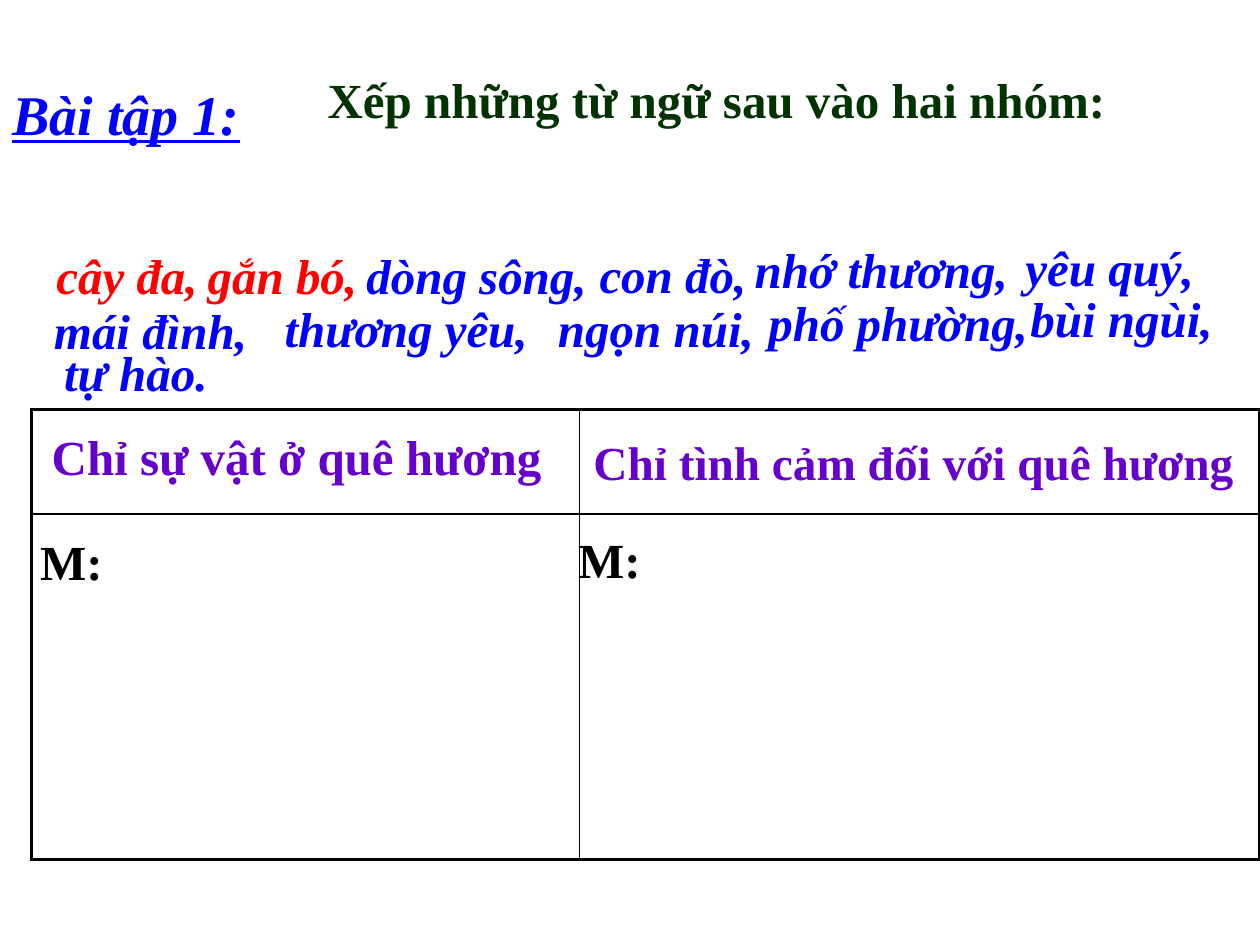
from lxml.etree import SubElement
from pptx import Presentation
from pptx.dml.color import RGBColor
from pptx.enum.text import MSO_ANCHOR, MSO_AUTO_SIZE, PP_ALIGN
from pptx.oxml.ns import qn
from pptx.util import Inches, Pt

THEME = {
    "font": "Times New Roman",
    "label": 32, "text": 28, "small": 27,
    "blue": "0000FF", "red": "FF0000", "green": "003300",
    "purple": "6600CC", "black": "000000",
    "outer": 2.25, "inner": 1,
}

LINE_HEIGHT = 0.57
TITLE = ("Xếp những từ ngữ sau vào hai nhóm:", 2.5, 0.5, 6.67)
LABEL = ("Bài tập 1:", 0, 0.58, 2.33)
WORDS = [
    ("cây đa,", 0.35, 1.9, 1.33, "red"),
    ("gắn bó,", 1.55, 1.9, 1.5, "red"),
    ("dòng sông,", 2.81, 1.9, 2, "blue"),
    ("con đò,", 4.66, 1.89, 1.42, "blue"),
    ("nhớ thương,", 5.89, 1.85, 2.25, "blue"),
    ("yêu quý,", 8.04, 1.83, 1.58, "blue"),
    ("mái đình,", 0.33, 2.33, 1.75, "blue"),
    ("thương yêu,", 2.16, 2.32, 2.25, "blue"),
    ("ngọn núi,", 4.33, 2.32, 1.92, "blue"),
    ("phố phường,", 6, 2.27, 2.33, "blue"),
    ("bùi ngùi,", 8.08, 2.24, 1.67, "blue"),
    ("tự hào.", 0.41, 2.67, 1.68, "blue"),
]
GROUPS = [
    ("Chỉ sự vật ở quê hương", 0.12, 3.33, 4.42, "text", LINE_HEIGHT),
    ("Chỉ tình cảm đối với quê hương", 4.42, 3.39, 5.58, "small", 0.55),
]
SAMPLES = [("M:", 4.49, 4.15, 0.75), ("M:", 0.22, 4.17, 0.75)]
GRID_LEFT, GRID_TOP = 0.25, 3.25
COLUMNS = [4.35, 5.4]
ROWS = [0.83, 2.74]


def write(box, text, color, size="text", italic=False, underline=False, indent=0.1):
    frame = box.text_frame
    frame.word_wrap = True
    frame.auto_size = MSO_AUTO_SIZE.SHAPE_TO_FIT_TEXT
    frame.vertical_anchor = MSO_ANCHOR.MIDDLE
    frame.margin_left, frame.margin_right = Inches(indent), 0
    paragraph = frame.paragraphs[0]
    paragraph.alignment = PP_ALIGN.LEFT
    span = paragraph.add_run()
    span.text = text
    font = span.font
    font.name, font.size = THEME["font"], Pt(THEME[size])
    font.bold, font.italic, font.underline = True, italic, underline
    font.color.rgb = RGBColor.from_string(THEME[color])


def add_text(page, text, left, top, width, color, height=LINE_HEIGHT, **style):
    box = page.shapes.add_textbox(Inches(left), Inches(top), Inches(width), Inches(height))
    write(box, text, color, **style)


def add_title(page, text, left, top, width):
    title = page.shapes.title
    title.left, title.top = Inches(left), Inches(top)
    title.width, title.height = Inches(width), Inches(LINE_HEIGHT)
    write(title, text, "green")


def draw_borders(cell, outer_sides):
    properties = cell._tc.get_or_add_tcPr()
    for side in ("lnL", "lnR", "lnT", "lnB"):
        weight = THEME["outer" if side in outer_sides else "inner"]
        line = SubElement(properties, qn(f"a:{side}"), w=str(Pt(weight)))
        fill = SubElement(line, qn("a:solidFill"))
        SubElement(fill, qn("a:srgbClr"), val=THEME["black"])
    cell.fill.background()


def add_grid(page):
    table = page.shapes.add_table(
        len(ROWS), len(COLUMNS), Inches(GRID_LEFT), Inches(GRID_TOP),
        Inches(sum(COLUMNS)), Inches(sum(ROWS))).table
    table.first_row = table.horz_banding = False
    for column, width in zip(table.columns, COLUMNS):
        column.width = Inches(width)
    for row_index, height in enumerate(ROWS):
        table.rows[row_index].height = Inches(height)
        for column_index in range(len(COLUMNS)):
            outer_sides = {"lnR" if column_index else "lnL", "lnB" if row_index else "lnT"}
            draw_borders(table.cell(row_index, column_index), outer_sides)


def main():
    deck = Presentation()
    deck.slide_width, deck.slide_height = Inches(10), Inches(7.5)
    page = deck.slides.add_slide(deck.slide_layouts[5])
    add_title(page, *TITLE)
    add_text(page, *LABEL, "blue", height=0.64, size="label", italic=True, underline=True)
    for word in WORDS:
        add_text(page, *word, italic=True)
    add_grid(page)
    for text, left, top, width, size, height in GROUPS:
        add_text(page, text, left, top, width, "purple", height, size=size, indent=0.29)
    for sample in SAMPLES:
        add_text(page, *sample, "black")
    deck.save("out.pptx")


if __name__ == "__main__":
    main()
